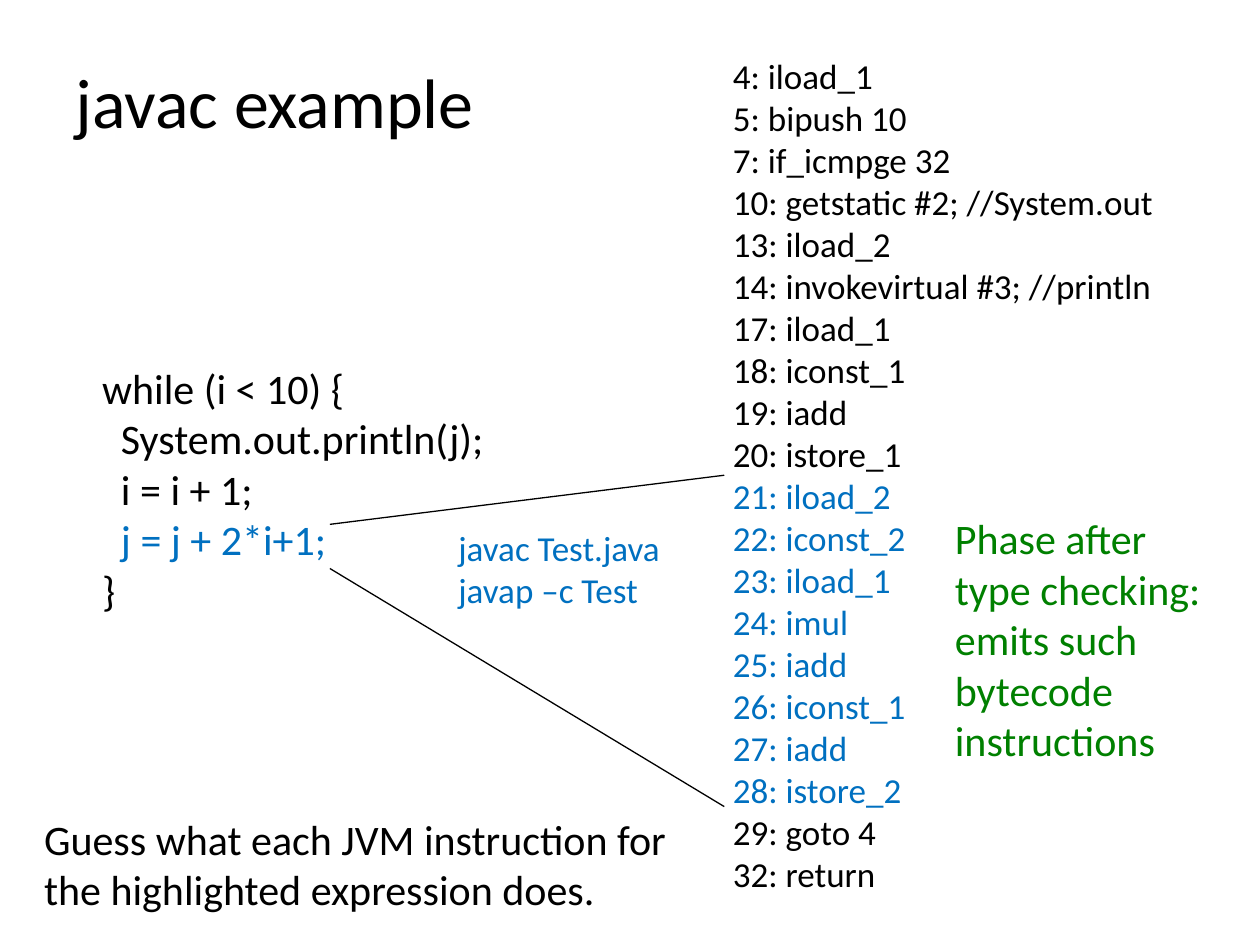
"""Build the slide that pairs a Java loop with its bytecode."""
from dataclasses import dataclass

from lxml.etree import SubElement
from pptx import Presentation
from pptx.dml.color import RGBColor
from pptx.enum.shapes import MSO_CONNECTOR
from pptx.enum.text import MSO_ANCHOR, MSO_AUTO_SIZE, PP_ALIGN
from pptx.oxml.ns import qn
from pptx.util import Cm, Pt

COLOURS = {"ink": "000000", "highlight": "0070C0", "remark": "008000"}
FONT = "Calibri"


@dataclass(frozen=True)
class Line:
    text: str
    colour: str = "ink"
    indent: float = 0


@dataclass(frozen=True)
class Block:
    left: float
    top: float
    width: float
    height: float
    size: int
    lines: list[Line]
    wrap: bool = True


@dataclass(frozen=True)
class Ray:
    start: tuple[float, float]
    end: tuple[float, float]


TITLE = Block(1.27, 0.43, 12.34, 3.18, 40, [Line("javac example")])

INSTRUCTIONS = [
    "4: iload_1", "5: bipush 10", "7: if_icmpge 32",
    "10: getstatic #2; //System.out", "13: iload_2",
    "14: invokevirtual #3; //println", "17: iload_1", "18: iconst_1",
    "19: iadd", "20: istore_1", "21: iload_2", "22: iconst_2",
    "23: iload_1", "24: imul", "25: iadd", "26: iconst_1", "27: iadd",
    "28: istore_2", "29: goto 4", "32: return",
]
HIGHLIGHTED = range(10, 18)
BYTECODE = Block(14.2, 0.89, 10.21, 17.35, 20, [
    Line(text, "highlight" if number in HIGHLIGHTED else "ink", 0.32)
    for number, text in enumerate(INSTRUCTIONS)
])

LOOP = Block(1.04, 7.16, 9.19, 5.38, 24, [
    Line("while (i < 10) {", indent=0.77),
    Line("System.out.println(j);", indent=1.15),
    Line("i = i + 1;", indent=1.15),
    Line("j = j + 2*i+1;", "highlight", 1.15),
    Line("}", indent=0.77),
])
COMMANDS = Block(8.99, 10.49, 4.62, 1.96, 20, [
    Line("javac Test.java", "highlight"),
    Line("javap –c Test", "highlight"),
], wrap=False)
PHASE = Block(19, 10.19, 5.82, 5.38, 24, [
    Line("Phase after\ntype checking:", "remark"),
    Line("emits such bytecode instructions", "remark"),
])
QUESTION = Block(0.64, 16.26, 13.36, 2.31, 24, [
    Line("Guess what each JVM instruction for the highlighted expression does."),
])

RAYS = [
    Ray((6.65, 10.57), (14.6, 9.58)),
    Ray((6.65, 11.46), (14.6, 16.26)),
]


def add_span(paragraph, text: str, size: int, colour: str) -> None:
    """Add one formatted run."""
    span = paragraph.add_run()
    span.text = text
    span.font.name = FONT
    span.font.size = Pt(size)
    span.font.color.rgb = RGBColor.from_string(COLOURS[colour])


def write_line(paragraph, line: Line, size: int) -> None:
    """Fill a paragraph with an indented, unbulleted line."""
    paragraph.alignment = PP_ALIGN.LEFT
    paragraph.space_before = Pt(0)
    properties = paragraph._p.get_or_add_pPr()
    properties.set("marL", str(Cm(line.indent)))
    properties.set("indent", "0")
    SubElement(properties, qn("a:buNone"))
    for position, part in enumerate(line.text.split("\n")):
        if position:
            paragraph.add_line_break()
        add_span(paragraph, part, size, line.colour)


def fill_box(box, block: Block) -> None:
    """Place a text shape and write its lines."""
    box.left, box.top = Cm(block.left), Cm(block.top)
    box.width, box.height = Cm(block.width), Cm(block.height)
    frame = box.text_frame
    frame.word_wrap = block.wrap
    frame.auto_size = MSO_AUTO_SIZE.NONE
    frame.vertical_anchor = MSO_ANCHOR.MIDDLE
    for position, line in enumerate(block.lines):
        paragraph = frame.add_paragraph() if position else frame.paragraphs[0]
        write_line(paragraph, line, block.size)


def add_block(page, block: Block) -> None:
    """Add a text box for a block."""
    fill_box(page.shapes.add_textbox(0, 0, 0, 0), block)


def add_ray(page, ray: Ray) -> None:
    """Add a thin straight line."""
    connector = page.shapes.add_connector(
        MSO_CONNECTOR.STRAIGHT, *map(Cm, ray.start + ray.end))
    connector.line.width = Pt(0.75)
    connector.line.color.rgb = RGBColor.from_string(COLOURS["ink"])
    SubElement(connector._element.spPr, qn("a:effectLst"))


def main() -> None:
    """Build and save the deck."""
    deck = Presentation()
    deck.slide_width, deck.slide_height = Cm(25.4), Cm(19.05)
    page = deck.slides.add_slide(deck.slide_layouts[1])
    fill_box(page.shapes.title, TITLE)
    fill_box(page.placeholders[1], BYTECODE)
    for block in (LOOP, COMMANDS, PHASE, QUESTION):
        add_block(page, block)
    for ray in RAYS:
        add_ray(page, ray)
    deck.save("out.pptx")


if __name__ == "__main__":
    main()
